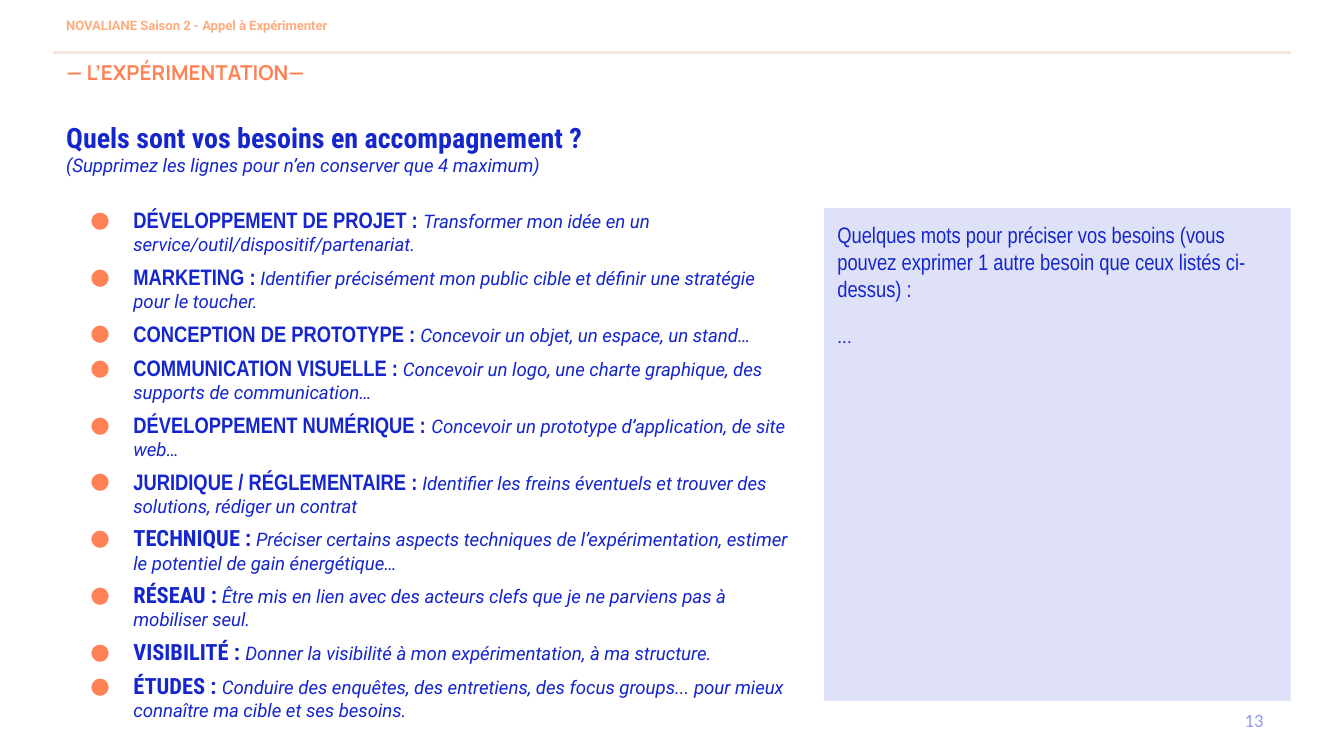
from dataclasses import dataclass

from lxml import etree
from pptx import Presentation
from pptx.dml.color import RGBColor
from pptx.enum.shapes import MSO_CONNECTOR, MSO_SHAPE
from pptx.enum.text import MSO_ANCHOR, MSO_AUTO_SIZE, PP_ALIGN
from pptx.oxml.ns import qn
from pptx.util import Pt

TITLE_ONLY = 5
RECTANGLE = MSO_SHAPE.RECTANGLE
STRAIGHT = MSO_CONNECTOR.STRAIGHT
TOP, MIDDLE = MSO_ANCHOR.TOP, MSO_ANCHOR.MIDDLE
LEFT, RIGHT = PP_ALIGN.LEFT, PP_ALIGN.RIGHT
NO_AUTOFIT = MSO_AUTO_SIZE.NONE


@dataclass(frozen=True)
class Theme:
    blue: str = "1526CC"
    lavender: str = "929DEA"
    orange: str = "FF8257"
    peach: str = "FFAD7D"
    sand: str = "F3E6DE"
    body: str = "Roboto"
    condensed: str = "Roboto Condensed"
    narrow: str = "Arial Narrow"
    display: str = "Manrope"
    number: str = "Calibri"
    question_size: int = 15
    need_size: int = 12
    title_size: int = 11
    body_size: int = 10
    header_size: int = 7


THEME = Theme()
MARGIN, RIGHT_EDGE, RULE_Y = 28.4, 691.4, 28.2

# Need, description, font of the need
NEEDS = [
    ("DÉVELOPPEMENT DE PROJET : ",
     "Transformer mon idée en un service/outil/dispositif/partenariat.", THEME.narrow),
    ("MARKETING :",
     " Identifier précisément mon public cible et définir une stratégie pour le toucher.",
     THEME.narrow),
    ("CONCEPTION DE PROTOTYPE :",
     " Concevoir un objet, un espace, un stand…", THEME.narrow),
    ("COMMUNICATION VISUELLE :",
     " Concevoir un logo, une charte graphique, des supports de communication…",
     THEME.narrow),
    ("DÉVELOPPEMENT NUMÉRIQUE : ",
     "Concevoir un prototype d’application, de site web…", THEME.narrow),
    ("JURIDIQUE / RÉGLEMENTAIRE :",
     " Identifier les freins éventuels et trouver des solutions, rédiger un contrat",
     THEME.narrow),
    ("TECHNIQUE :",
     " Préciser certains aspects techniques de l’expérimentation, "
     "estimer le potentiel de gain énergétique…", THEME.condensed),
    ("RÉSEAU :",
     " Être mis en lien avec des acteurs clefs que je ne parviens pas à mobiliser seul.",
     THEME.condensed),
    ("VISIBILITÉ : ",
     "Donner la visibilité à mon expérimentation, à ma structure.", THEME.condensed),
    ("ÉTUDES : ",
     "Conduire des enquêtes, des entretiens, des focus groups... "
     "pour mieux connaître ma cible et ses besoins.", THEME.condensed),
]


def style(run, font, size, color, bold=False, italic=False):
    run.font.name = font
    run.font.size = Pt(size)
    run.font.color.rgb = RGBColor.from_string(color)
    run.font.bold = bold
    run.font.italic = italic


def set_frame(frame, inset_y=3.6, anchor=TOP):
    frame.word_wrap = True
    frame.auto_size = NO_AUTOFIT
    frame.vertical_anchor = anchor
    frame.margin_left = frame.margin_right = Pt(7.2)
    frame.margin_top = frame.margin_bottom = Pt(inset_y)


def add_text(slide, box, inset_y=3.6, anchor=TOP):
    frame = slide.shapes.add_textbox(*map(Pt, box)).text_frame
    set_frame(frame, inset_y, anchor)
    return frame


def add_line_of_text(frame, text, align=LEFT, **look):
    frame.text = text
    paragraph = frame.paragraphs[0]
    paragraph.alignment = align
    style(paragraph.runs[0], **look)


def set_title(slide, text, box):
    title = slide.shapes.title
    title.left, title.top, title.width, title.height = map(Pt, box)
    set_frame(title.text_frame)
    add_line_of_text(title.text_frame, text, font=THEME.display,
                     size=THEME.title_size, color=THEME.orange, bold=True)


def add_rule(slide):
    rule = slide.shapes.add_connector(
        STRAIGHT, Pt(MARGIN), Pt(RULE_Y), Pt(RIGHT_EDGE), Pt(RULE_Y))
    rule.line.color.rgb = RGBColor.from_string(THEME.sand)
    rule.line.width = Pt(1.5)
    etree.SubElement(rule._element.spPr, qn("a:effectLst"))


def set_bullet(paragraph):
    properties = paragraph._p.get_or_add_pPr()
    properties.set("marL", str(Pt(36)))
    properties.set("indent", str(-Pt(23)))
    color = etree.SubElement(properties, qn("a:buClr"))
    etree.SubElement(color, qn("a:srgbClr"), val=THEME.orange)
    etree.SubElement(properties, qn("a:buSzPts"), val=str(THEME.body_size * 100))
    etree.SubElement(properties, qn("a:buFont"), typeface=THEME.body)
    etree.SubElement(properties, qn("a:buChar"), char="●")


def add_needs(slide, box):
    frame = add_text(slide, box)
    frame.text = "Quels sont vos besoins en accompagnement ?"
    heading = frame.paragraphs[0]
    heading.add_line_break()
    heading.add_run().text = "(Supprimez les lignes pour n’en conserver que 4 maximum)"
    question, hint = heading.runs
    style(question, THEME.condensed, THEME.question_size, THEME.blue, bold=True)
    style(hint, THEME.body, THEME.body_size, THEME.blue, italic=True)

    for index, (need, description, font) in enumerate(NEEDS):
        item = frame.add_paragraph()
        item.space_before = Pt(4 if index else 16)
        set_bullet(item)
        item.text = need
        item.add_run().text = description
        label, detail = item.runs
        style(label, font, THEME.need_size, THEME.blue, bold=True)
        style(detail, THEME.body, THEME.body_size, THEME.blue, italic=True)


def add_answer_panel(slide, box):
    panel = slide.shapes.add_shape(RECTANGLE, *map(Pt, box))
    panel.shadow.inherit = False
    panel.line.fill.background()
    panel.fill.solid()
    panel.fill.fore_color.rgb = RGBColor.from_string(THEME.lavender)
    tint = panel._element.spPr.find(qn("a:solidFill"))[0]
    etree.SubElement(tint, qn("a:alpha"), val="30000")

    frame = panel.text_frame
    set_frame(frame, inset_y=7.2)
    add_line_of_text(
        frame, "Quelques mots pour préciser vos besoins (vous pouvez exprimer "
        "1 autre besoin que ceux listés ci-dessus) :",
        font=THEME.narrow, size=THEME.need_size, color=THEME.blue)
    answer = frame.add_paragraph()
    answer.text = "..."
    answer.alignment = LEFT
    answer.space_before = Pt(12)
    style(answer.runs[0], THEME.body, THEME.body_size, THEME.blue)


def main():
    deck = Presentation()
    deck.slide_width, deck.slide_height = Pt(720), Pt(405)
    slide = deck.slides.add_slide(deck.slide_layouts[TITLE_ONLY])

    # Needs and free answer
    add_needs(slide, (MARGIN, 61, 401, 333))
    add_answer_panel(slide, (441.5, 111.5, RIGHT_EDGE - 441.5, 264))

    # Header band
    add_rule(slide)
    set_title(slide, "— L’EXPÉRIMENTATION—", (MARGIN, 28.5, 365, 21))
    header = add_text(slide, (MARGIN, 5, 166, 23), inset_y=4.5)
    add_line_of_text(header, "NOVALIANE Saison 2 - Appel à Expérimenter",
                     font=THEME.body, size=THEME.header_size,
                     color=THEME.peach, bold=True)

    # Page number
    page = add_text(slide, (516, 375, 168, 21.5), anchor=MIDDLE)
    add_line_of_text(page, "13", RIGHT, font=THEME.number,
                     size=THEME.body_size, color=THEME.lavender)

    deck.save("out.pptx")


if __name__ == "__main__":
    main()
